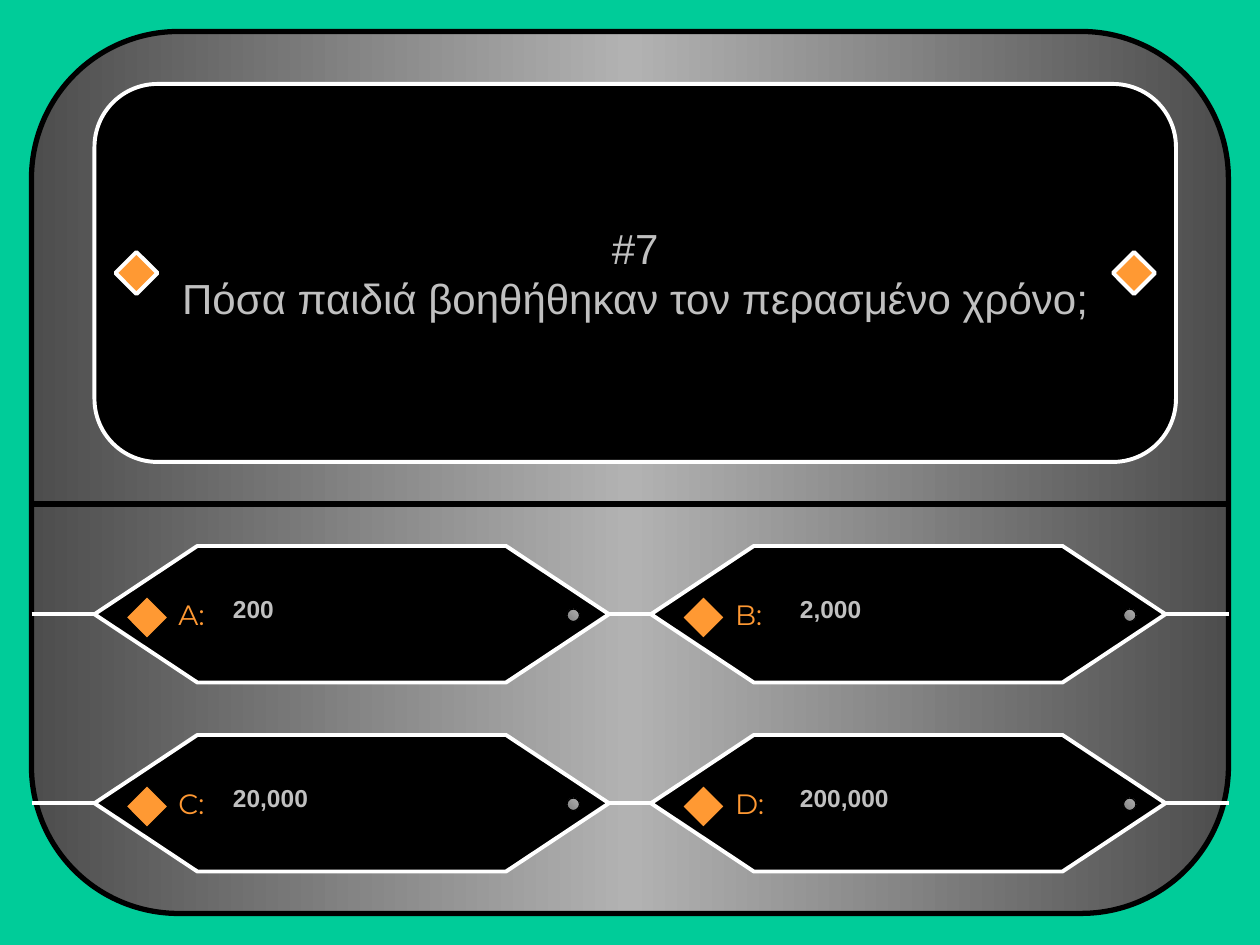
from copy import deepcopy

from lxml import etree
from pptx import Presentation
from pptx import util as u
from pptx.dml import color
from pptx.enum import shapes, text
from pptx.oxml import ns

UNIT = 1 / 12
COL_STEP, ROW_STEP = 53, 18
BLACK, WHITE, ORANGE, SILVER = "000000", "FFFFFF", "FF9933", "C0C0C0"
KIND = shapes.MSO_SHAPE
ANSWERS = [
    [("A:", "200"), ("B:", "2,000")],
    [("C:", "20,000"), ("D:", "200,000")],
]


def grid(n):
    return u.Inches(n * UNIT)


def rgb(value):
    return color.RGBColor.from_string(value)


def style_line(s, value, width):
    s.line.color.rgb = rgb(value)
    s.line.width = u.Pt(width)


def add_shape(sp, kind, box, fill, line=BLACK, width=0.75):
    s = sp.add_shape(kind, *map(grid, box))
    s.shadow.inherit = False
    if fill:
        s.fill.solid()
        s.fill.fore_color.rgb = rgb(fill)
    else:
        s.fill.background()
    style_line(s, line, width)
    return s


def set_gradient(s, colors, angle=0):
    s.fill.gradient()
    s.fill.gradient_angle = angle
    stops = s._element.spPr.find(ns.qn("a:gradFill")).find(ns.qn("a:gsLst"))
    for _ in colors[2:]:
        stops.append(deepcopy(stops[0]))
    for i, (stop, value) in enumerate(zip(s.fill.gradient_stops, colors)):
        stop.position = i / (len(colors) - 1)
        stop.color.rgb = rgb(value)


def add_line(sp, x1, x2, y, value=WHITE, width=2.25):
    c = sp.add_connector(shapes.MSO_CONNECTOR.STRAIGHT, *map(grid, (x1, y, x2, y)))
    style_line(c, value, width)
    etree.SubElement(c._element.spPr, ns.qn("a:effectLst"))


def set_text(s, content, font, size, value, bold=False, align=text.PP_ALIGN.LEFT):
    tf = s.text_frame
    tf.text = content
    for p in tf.paragraphs:
        p.alignment = align
        for r in p.runs:
            r.font.name, r.font.size, r.font.bold = font, u.Pt(size), bold
            r.font.color.rgb = rgb(value)
    return tf


def add_panel(sp):
    s = add_shape(sp, KIND.FLOWCHART_ALTERNATE_PROCESS, (3, 3, 114, 84), BLACK, width=3)
    set_gradient(s, ["4D4D4D", "B2B2B2", "4D4D4D"])
    add_line(sp, 3, 117, 48, BLACK, 3)


def add_question(sp, content):
    s = add_shape(sp, KIND.FLOWCHART_ALTERNATE_PROCESS, (9, 8, 103, 36), BLACK, WHITE, 2.25)
    tf = set_text(s, content, "Arial", 24, SILVER, align=text.PP_ALIGN.CENTER)
    tf.vertical_anchor = text.MSO_ANCHOR.MIDDLE
    tf.word_wrap = False
    for x in (11, 106):
        add_shape(sp, KIND.DIAMOND, (x, 24, 4, 4), ORANGE, WHITE, 2.25)


def add_answer(sp, col, row, letter, answer):
    x, y = 9 + col * COL_STEP, 52 + row * ROW_STEP
    add_shape(sp, KIND.FLOWCHART_PREPARATION, (x, y, 49, 13), BLACK, WHITE, 2.25)
    add_shape(sp, KIND.DIAMOND, (x + 3, y + 4.8, 4, 4), ORANGE)
    dot = add_shape(sp, KIND.FLOWCHART_CONNECTOR, (x + 45, y + 6, 1.2, 1.2), BLACK)
    set_gradient(dot, ["808080", "B2B2B2"], 45)

    label = add_shape(sp, KIND.RECTANGLE, (x + 8, y + 4.8, 4, 3.4), None)
    tf = set_text(label, letter, "Montserrat", 16, ORANGE)
    tf.margin_left = tf.margin_right = tf.margin_top = tf.margin_bottom = 0
    tf.vertical_anchor = text.MSO_ANCHOR.MIDDLE
    tf.auto_size = text.MSO_AUTO_SIZE.SHAPE_TO_FIT_TEXT

    box = add_shape(sp, KIND.RECTANGLE, (x + 12 + col, y + 4, 28, 4.1), BLACK if col else None)
    tf = set_text(box, answer, "Arial", 14, SILVER, bold=True)
    tf.vertical_anchor = text.MSO_ANCHOR.TOP
    tf.auto_size = text.MSO_AUTO_SIZE.SHAPE_TO_FIT_TEXT


def main():
    prs = Presentation()
    prs.slide_width, prs.slide_height = u.Inches(10), u.Inches(7.5)
    slide = prs.slides.add_slide(prs.slide_layouts[6])
    slide.background.fill.solid()
    slide.background.fill.fore_color.rgb = rgb("00CC99")
    sp = slide.shapes

    add_panel(sp)
    add_question(sp, "#7\nΠόσα παιδιά βοηθήθηκαν τον περασμένο χρόνο;")
    for row, answers in enumerate(ANSWERS):
        for x1, x2 in ((3, 9), (58, 62), (111, 117)):
            add_line(sp, x1, x2, 58.5 + row * ROW_STEP)
        for col, (letter, answer) in enumerate(answers):
            add_answer(sp, col, row, letter, answer)

    prs.save("out.pptx")


if __name__ == "__main__":
    main()
